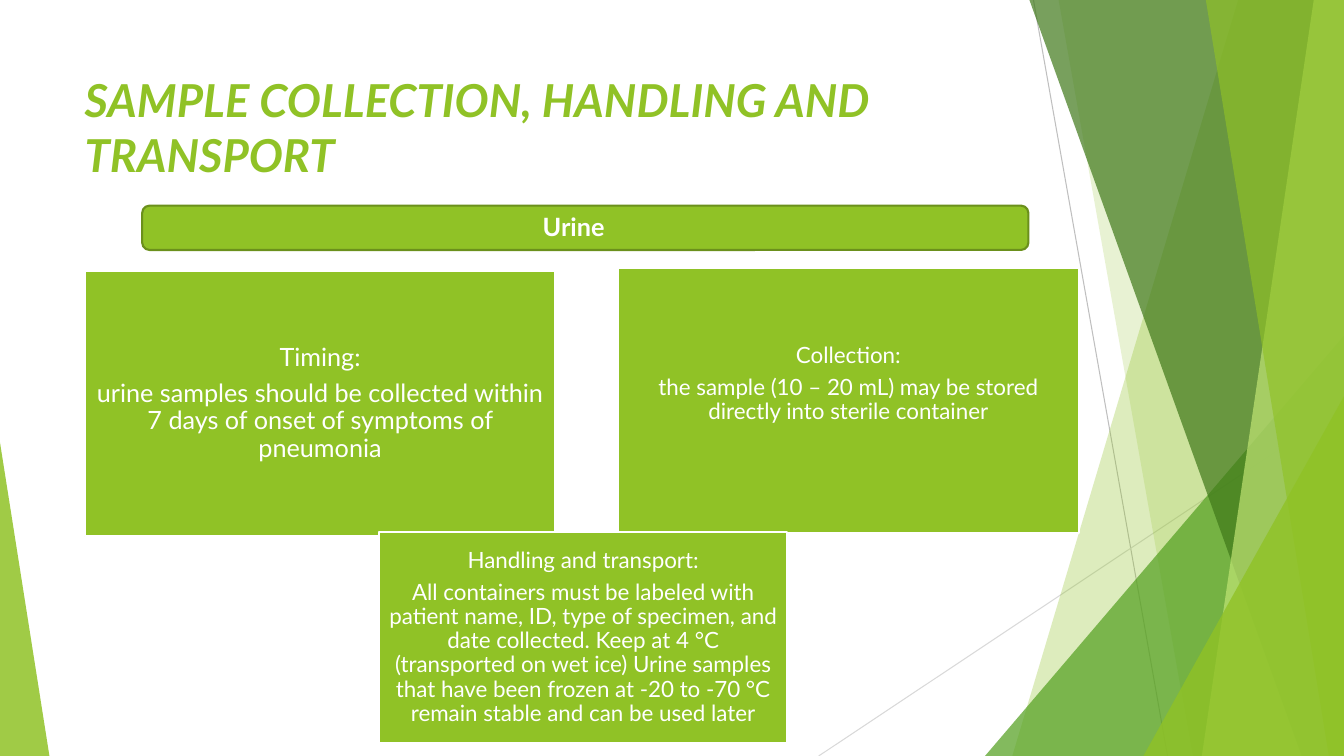
from lxml import etree
from pptx import Presentation
from pptx.dml.color import RGBColor
from pptx.enum.shapes import MSO_CONNECTOR, MSO_SHAPE
from pptx.enum.text import MSO_ANCHOR, MSO_AUTO_SIZE, PP_ALIGN
from pptx.oxml.ns import qn
from pptx.util import Inches, Pt

WIDTH, HEIGHT = 13.33, 7.5


def color(hex_string):
    return RGBColor.from_string(hex_string)


def write_text(frame, *texts, size=16, fill="FFFFFF", bold=False, italic=False,
               align=PP_ALIGN.CENTER, anchor=MSO_ANCHOR.MIDDLE, line_spacing=1.0,
               space_after=0, margins=(0.1, 0.05, 0.1, 0.05)):
    """Fill a frame with one paragraph per text; margins run left, top, right, bottom."""
    frame.word_wrap = True
    frame.auto_size = MSO_AUTO_SIZE.NONE
    frame.vertical_anchor = anchor
    (frame.margin_left, frame.margin_top,
     frame.margin_right, frame.margin_bottom) = map(Inches, margins)
    for index, text in enumerate(texts):
        paragraph = frame.add_paragraph() if index else frame.paragraphs[0]
        paragraph.alignment = align
        paragraph.line_spacing = line_spacing
        paragraph.space_after = Pt(space_after)
        run = paragraph.add_run()
        run.text = text
        font = run.font
        font.name, font.size, font.bold, font.italic = "Lato", Pt(size), bold, italic
        font.color.rgb = color(fill)


class GreenSlide:
    font_size = 16
    green = "90C226"

    def __init__(self, presentation):
        self.slide = presentation.slides.add_slide(presentation.slide_layouts[5])
        self.shapes = self.slide.shapes

    def title(self, text, box):
        title = self.shapes.title
        title.left, title.top, title.width, title.height = map(Inches, box)
        write_text(title.text_frame, text, size=32.4, fill=self.green, bold=True,
                   italic=True, align=PP_ALIGN.LEFT, anchor=MSO_ANCHOR.TOP)

    def line(self, start, end, fill):
        line = self.shapes.add_connector(
            MSO_CONNECTOR.STRAIGHT, *map(Inches, (*start, *end)))
        line.line.color.rgb = color(fill)
        line.line.width = Pt(0.75)
        etree.SubElement(line._element.spPr, qn("a:effectLst"))

    def paint(self, shape, fill, opacity):
        """Give a borderless shape a fill with an opacity in percent."""
        shape.shadow.inherit = False
        shape.line.fill.background()
        shape.fill.solid()
        shape.fill.fore_color.rgb = color(fill)
        fill_color = shape._element.spPr.find(f".//{qn('a:srgbClr')}")
        etree.SubElement(fill_color, qn("a:alpha"), val=str(opacity * 1000))

    def band(self, top_x, bottom_x, fill, opacity):
        """Draw a full-height band from a slanted left edge to the slide's right edge."""
        builder = self.shapes.build_freeform(Inches(top_x), 0)
        corners = [(WIDTH, 0), (WIDTH, HEIGHT), (bottom_x, HEIGHT)]
        builder.add_line_segments([(Inches(x), Inches(y)) for x, y in corners])
        self.paint(builder.convert_to_shape(), fill, opacity)

    def corner(self, left, top, width, apex, fill, opacity):
        """Draw a right triangle standing on the slide's bottom edge."""
        triangle = self.shapes.add_shape(
            MSO_SHAPE.ISOSCELES_TRIANGLE, *map(Inches, (left, top, width, HEIGHT - top)))
        triangle.adjustments[0] = apex
        self.paint(triangle, fill, opacity)

    def box(self, preset, box, *texts, border="FFFFFF", **text_format):
        shape = self.shapes.add_shape(preset, *map(Inches, box))
        shape.shadow.inherit = False
        shape.fill.solid()
        shape.fill.fore_color.rgb = color(self.green)
        shape.line.color.rgb = color(border)
        shape.line.width = Pt(1.5)
        write_text(shape.text_frame, *texts, **text_format)

    def card(self, box, heading, body, size=font_size, bottom=0.07):
        self.box(MSO_SHAPE.RECTANGLE, box, heading, body, size=size, line_spacing=0.9,
                 space_after=0.35 * size, margins=(0.07, 0.07, 0.07, bottom))


def main():
    presentation = Presentation()
    presentation.slide_width, presentation.slide_height = Inches(WIDTH), Inches(HEIGHT)
    slide = GreenSlide(presentation)

    slide.line((10.25, 0), (11.58, HEIGHT), "BFBFBF")
    slide.line((WIDTH, 4.03), (8.12, HEIGHT), "D9D9D9")
    slide.band(12.28, 10.04, slide.green, 30)
    slide.band(10.5, 11.83, slide.green, 20)
    slide.corner(9.77, 3.33, 3.56, 1, "54A021", 72)
    slide.band(10.21, 12.91, "3F7819", 70)
    slide.band(13.03, 11.92, "C0E474", 70)
    slide.band(11.96, 13.18, slide.green, 65)
    slide.corner(11.34, 3.93, 1.99, 1, slide.green, 80)
    slide.corner(0, 4.39, 0.49, 0, slide.green, 85)

    slide.title("SAMPLE COLLECTION, HANDLING AND TRANSPORT", (0.74, 0.67, 9.4, 1.44))
    slide.card((0.84, 2.69, 4.67, 2.63), "Timing:",
               "urine samples should be collected within 7 days of onset of "
               "symptoms of pneumonia", size=18)
    slide.card((6.13, 2.66, 4.57, 2.63), "Collection:",
               "the sample (10 – 20 mL) may be stored directly into sterile container",
               bottom=0.39)
    slide.card((3.76, 5.28, 4.05, 2.09), "Handling and transport:",
               "All containers must be labeled with patient name, ID, type of specimen, "
               "and date collected. Keep at 4 °C (transported on wet ice) Urine samples "
               "that have been frozen at -20 to -70 °C remain stable and can be used later")
    slide.box(MSO_SHAPE.ROUNDED_RECTANGLE, (1.41, 2.04, 8.79, 0.44), "Urine",
              border="6B901C", size=18, bold=True, margins=(0.1, 0.05, 0.33, 0.08))

    presentation.save("out.pptx")


if __name__ == "__main__":
    main()
